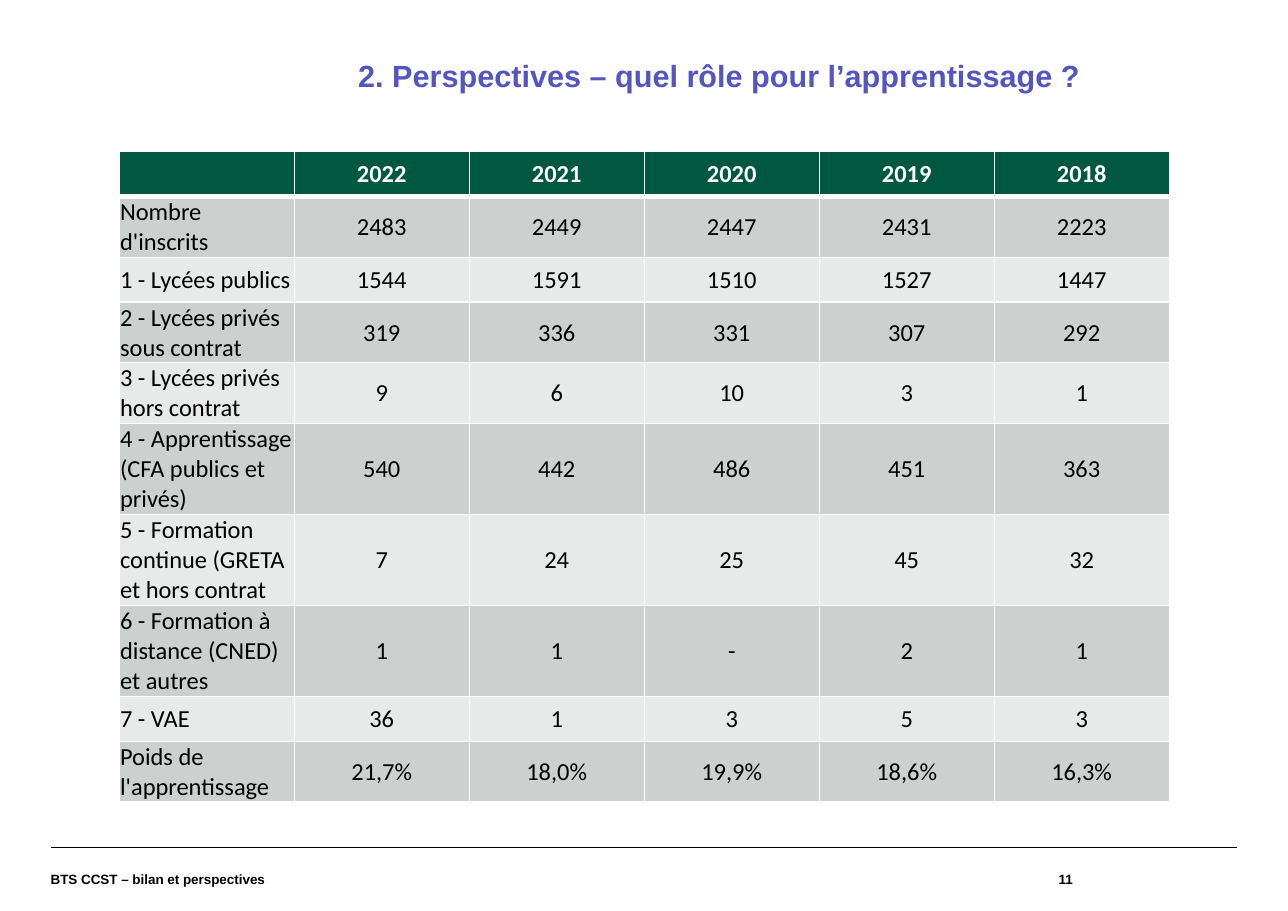
from dataclasses import dataclass

from lxml import etree
from pptx import Presentation
from pptx.dml.color import RGBColor
from pptx.enum.shapes import MSO_CONNECTOR
from pptx.enum.text import MSO_ANCHOR, PP_ALIGN
from pptx.oxml.ns import qn
from pptx.util import Cm, Pt

LEFT, CENTER, RIGHT = PP_ALIGN.LEFT, PP_ALIGN.CENTER, PP_ALIGN.RIGHT
TOP, MIDDLE = MSO_ANCHOR.TOP, MSO_ANCHOR.MIDDLE
STRAIGHT = MSO_CONNECTOR.STRAIGHT


@dataclass(frozen=True)
class Theme:
    """Colours, fonts and sizes of the slide."""
    title: str = "5555C1"
    header: str = "005841"
    bands: tuple = ("CCD1CF", "E7EAE9")
    dark: str = "000000"
    light: str = "FFFFFF"
    font: str = "Arial"
    table_font: str = "Calibri"
    title_size: float = 20
    table_size: float = 16
    footer_size: float = 8.8
    rule: float = 0.75
    grid: float = 1
    header_rule: float = 3


THEME = Theme()

YEARS = ["", "2022", "2021", "2020", "2019", "2018"]
ENROLMENT = [
    ["Nombre d'inscrits", "2483", "2449", "2447", "2431", "2223"],
    ["1 - Lycées publics", "1544", "1591", "1510", "1527", "1447"],
    ["2 - Lycées privés sous contrat", "319", "336", "331", "307", "292"],
    ["3 - Lycées privés hors contrat", "9", "6", "10", "3", "1"],
    ["4 - Apprentissage (CFA publics et privés)", "540", "442", "486", "451", "363"],
    ["5 - Formation continue (GRETA et hors contrat", "7", "24", "25", "45", "32"],
    ["6 - Formation à distance (CNED) et autres", "1", "1", "-", "2", "1"],
    ["7 - VAE", "36", "1", "3", "5", "3"],
    ["Poids de l'apprentissage", "21,7%", "18,0%", "19,9%", "18,6%", "16,3%"],
]
LABEL_LINES = [1, 2, 1, 2, 2, 3, 3, 3, 1, 2]
ROW_HEIGHTS = {1: 1.03, 2: 1.4, 3: 2.1}


def add_run(p, text, font, size, color, bold):
    """Add one formatted run to a paragraph."""
    r = p.add_run()
    r.text = text
    r.font.name = font
    r.font.size = Pt(size)
    r.font.bold = bold
    r.font.color.rgb = RGBColor.from_string(color)


def add_text(slide, box, text, size, color, align=LEFT, anchor=MIDDLE, spacing=1.0):
    """Add a bold line of text without margins in a box given in centimetres."""
    tf = slide.shapes.add_textbox(*map(Cm, box)).text_frame
    tf.word_wrap = True
    tf.vertical_anchor = anchor
    tf.margin_left = tf.margin_right = tf.margin_top = tf.margin_bottom = 0
    p = tf.paragraphs[0]
    p.alignment = align
    p.line_spacing = spacing
    add_run(p, text, THEME.font, size, color, True)


def set_borders(cell, top, bottom):
    """Draw the light grid lines around a cell."""
    tc_pr = cell._tc.get_or_add_tcPr()
    widths = {"a:lnL": THEME.grid, "a:lnR": THEME.grid, "a:lnT": top, "a:lnB": bottom}
    for tag, width in widths.items():
        ln = etree.SubElement(tc_pr, qn(tag), w=str(Pt(width)))
        fill = etree.SubElement(ln, qn("a:solidFill"))
        etree.SubElement(fill, qn("a:srgbClr"), val=THEME.light)


def fill_cell(cell, text, row, col):
    """Format a table cell according to its row and column."""
    is_header = row == 0
    set_borders(cell,
                THEME.header_rule if row == 1 else THEME.grid,
                THEME.header_rule if is_header else THEME.grid)
    cell.fill.solid()
    color = THEME.header if is_header else THEME.bands[(row - 1) % 2]
    cell.fill.fore_color.rgb = RGBColor.from_string(color)
    cell.vertical_anchor = MIDDLE
    cell.margin_left = cell.margin_right = cell.margin_top = Cm(0.02)
    cell.margin_bottom = 0
    p = cell.text_frame.paragraphs[0]
    p.alignment = CENTER if col else LEFT
    if text:
        add_run(p, text, THEME.table_font, THEME.table_size,
                THEME.light if is_header else THEME.dark, is_header)


def add_enrolment_table(slide, left, top, width):
    """Add the enrolment table with equal columns."""
    data = [YEARS] + ENROLMENT
    heights = [ROW_HEIGHTS[lines] for lines in LABEL_LINES]
    table = slide.shapes.add_table(len(data), len(YEARS), Cm(left), Cm(top),
                                   Cm(width), Cm(sum(heights))).table
    for row, (values, height) in enumerate(zip(data, heights)):
        table.rows[row].height = Cm(height)
        for col, text in enumerate(values):
            fill_cell(table.cell(row, col), text, row, col)


def add_footer(slide, left, top, width, height):
    """Add the footer rule, the document name and the page number."""
    line = slide.shapes.add_connector(STRAIGHT, Cm(left), Cm(top),
                                      Cm(left + width), Cm(top))
    line.line.width = Pt(THEME.rule)
    line.line.color.rgb = RGBColor.from_string(THEME.dark)
    etree.SubElement(line._element.spPr, qn("a:effectLst"))
    name_width, page_width = 19.18, 4.39
    add_text(slide, (left, top, name_width, height),
             "BTS CCST – bilan et perspectives", THEME.footer_size, THEME.dark)
    add_text(slide, (left + name_width, top, page_width, height), "11",
             THEME.footer_size, THEME.dark, RIGHT)


def main():
    """Build the slide and save it."""
    prs = Presentation()
    prs.slide_width, prs.slide_height = Cm(29.7), Cm(21)
    slide = prs.slides.add_slide(prs.slide_layouts[6])
    add_text(slide, (8.26, 1.4, 21, 2.95),
             "2. Perspectives – quel rôle pour l’apprentissage ?",
             THEME.title_size, THEME.title, anchor=TOP, spacing=0.9)
    add_enrolment_table(slide, 2.75, 3.5, 24.21)
    add_footer(slide, 1.17, 19.53, 27.35, 1.47)
    prs.save("out.pptx")


if __name__ == "__main__":
    main()
